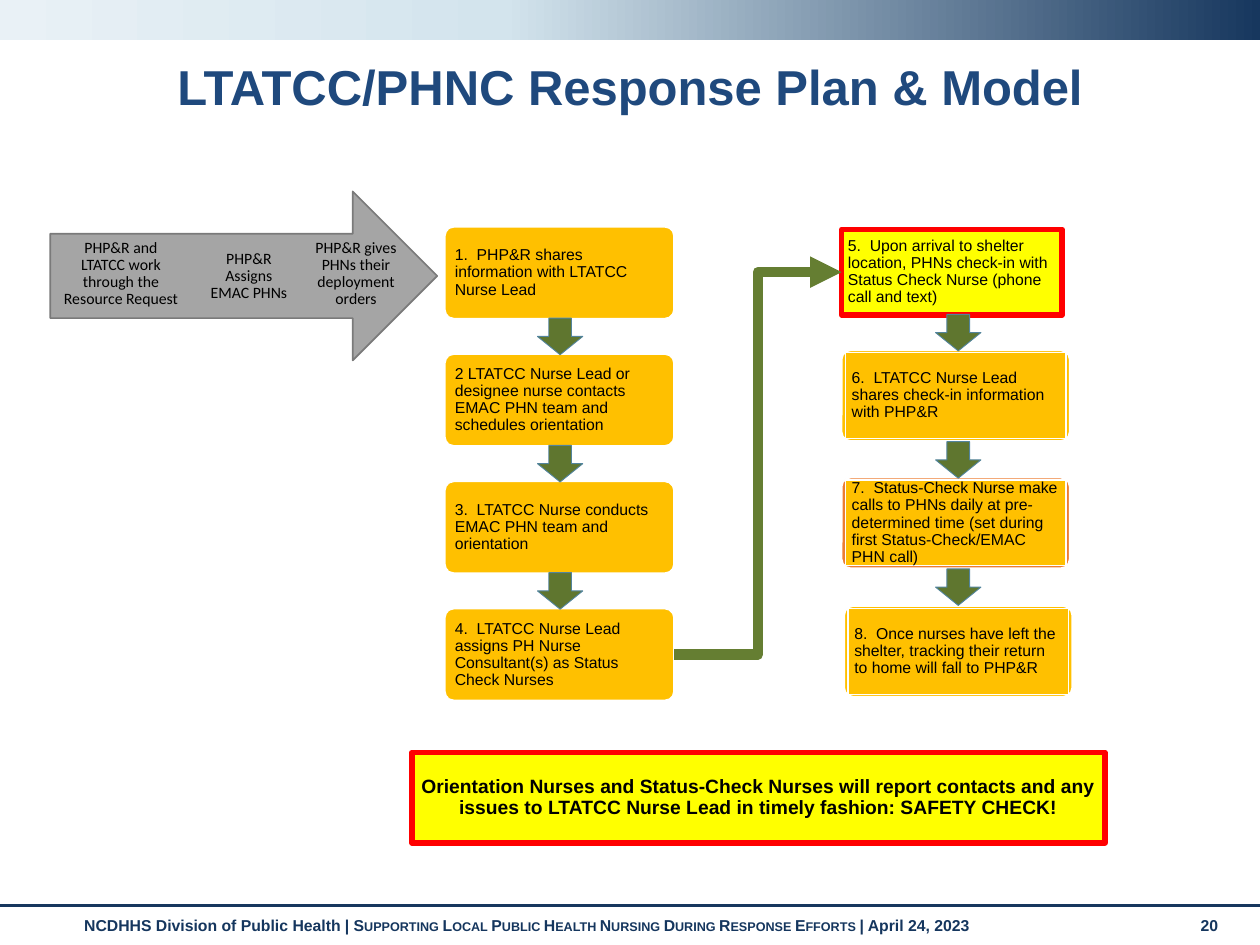
from copy import deepcopy
from dataclasses import dataclass

from lxml.etree import SubElement
from pptx import Presentation
from pptx.dml.color import RGBColor
from pptx.enum.shapes import MSO_CONNECTOR as Link, MSO_SHAPE as Kind
from pptx.enum.text import MSO_ANCHOR as Anchor, MSO_AUTO_SIZE as Fit, PP_ALIGN as Align
from pptx.oxml.ns import qn
from pptx.util import Inches, Pt


@dataclass(frozen=True)
class Theme:
    navy: str = "15365E"
    rule: str = "17375E"
    title: str = "1F497D"
    black: str = "000000"
    white: str = "FFFFFF"
    gold: str = "FFC000"
    orange: str = "ED7D31"
    yellow: str = "FFFF00"
    red: str = "FF0000"
    gray: str = "A5A5A5"
    edge: str = "7A7A7A"
    green: str = "5F762F"
    teal: str = "52849C"
    path_green: str = "657E32"
    bar: tuple = ((0, "17375E"), (0.6, "D3E4ED"), (1, "E9F1F6"))
    font: str = "Arial"
    alt_font: str = "Calibri"
    head: int = 28
    note: int = 11
    small: int = 9


@dataclass(frozen=True)
class Step:
    left: float
    top: float
    text: str
    size: tuple = (1.82, 0.73)
    back: str = Theme.gold
    edge: float = 1
    fill: str = Theme.gold
    line: str | None = None
    width: float = 0.75


T = Theme()
PITCH = 1.01
WIDE = (1.81, 0.72)

LEFT = [Step(3.53, 1.8 + PITCH * i, text) for i, text in enumerate((
    "1.  PHP&R shares information with LTATCC Nurse Lead",
    "2 LTATCC Nurse Lead or designee nurse contacts EMAC PHN team and schedules orientation",
    "3.  LTATCC Nurse conducts EMAC PHN team and orientation",
    "4.  LTATCC Nurse Lead assigns PH Nurse Consultant(s) as Status Check Nurses",
))]
RIGHT = [
    Step(6.65, 1.8, "5.  Upon arrival to shelter location, PHNs check-in with "
         "Status Check Nurse (phone call and text)",
         WIDE, T.gray, 1.5, T.yellow, T.red, 3),
    Step(6.68, 2.78, "6.  LTATCC Nurse Lead shares check-in information with PHP&R",
         WIDE, line=T.white),
    Step(6.68, 3.79, "7.  Status-Check Nurse make calls to PHNs daily at "
         "pre-determined time (set during first Status-Check/EMAC PHN call)",
         WIDE, T.orange, line=T.white),
    Step(6.7, 4.81, "8.  Once nurses have left the shelter, tracking their return "
         "to home will fall to PHP&R", WIDE, line=T.white),
]
INTAKE = (
    ((0.49, 1.84, 0.94, 0.67), "PHP&R and LTATCC work through the Resource Request"),
    ((1.65, 1.86, 0.65, 0.67), "PHP&R Assigns EMAC PHNs"),
    ((2.5, 1.84, 0.65, 0.67), "PHP&R gives PHNs their deployment orders"),
)


def rgb(code: str) -> RGBColor:
    return RGBColor.from_string(code)


def style(para, size: float, color: str, bold=False, font=T.font) -> None:
    para.font.name, para.font.size = font, Pt(size)
    para.font.bold, para.font.color.rgb = bold, rgb(color)


def block(shapes, kind, box: tuple, fill: str | None, line: str | None = None,
          width: float = 1):
    shape = shapes.add_shape(kind, *map(Inches, box))
    shape.shadow.inherit = False
    if fill:
        shape.fill.solid()
        shape.fill.fore_color.rgb = rgb(fill)
    if line:
        shape.line.color.rgb = rgb(line)
        shape.line.width = Pt(width)
    else:
        shape.line.fill.background()
    return shape


def write(shape, text: str, pads: tuple, size: float = T.small,
          align=Align.LEFT, bold=False, font=T.font) -> None:
    frame = shape.text_frame
    frame.word_wrap = True
    frame.vertical_anchor = Anchor.MIDDLE
    frame.margin_left = frame.margin_right = Inches(pads[0])
    frame.margin_top = frame.margin_bottom = Inches(pads[1])
    para = frame.paragraphs[0]
    para.text, para.alignment, para.line_spacing = text, align, 0.9
    style(para, size, T.black, bold, font)


def card(shapes, step: Step) -> tuple:
    wide, high = step.size
    base = block(shapes, Kind.ROUNDED_RECTANGLE, (step.left, step.top, wide, high),
                 step.back, T.white, step.edge)
    base.adjustments[0] = 0.1
    face = block(shapes, Kind.RECTANGLE,
                 (step.left + 0.03, step.top + 0.02, 1.75, high - 0.04),
                 step.fill, step.line, step.width)
    write(face, step.text, (0.05, 0.05))
    return base, face


def arrows(shapes, left: float, top: float) -> None:
    for i in range(3):
        arrow = block(shapes, Kind.RIGHT_ARROW, (left, top + PITCH * i, 0.29, 0.36),
                      T.green, T.teal, 0.5)
        arrow.rotation = 90


def link(shapes, kind, ends: tuple, color: str, width: float):
    wire = shapes.add_connector(kind, *map(Inches, ends))
    wire.line.color.rgb = rgb(color)
    wire.line.width = Pt(width)
    SubElement(wire._element.spPr, qn("a:effectLst"))
    return wire


def footer(shapes, box: tuple, parts: list) -> None:
    frame = shapes.add_textbox(*map(Inches, box)).text_frame
    frame.word_wrap = True
    para = frame.paragraphs[0]
    style(para, T.small, T.navy, True)
    for text, caps in parts:
        run = para.add_run()
        run.text = text
        if caps:
            run.font._element.set("cap", "small")


def frame_page(slide) -> None:
    shapes = slide.shapes
    # Footer
    footer(shapes, (0.57, 7.22, 8.74, 0.3), [
        ("NCDHHS Division of Public Health | ", False),
        ("Supporting Local Public Health Nursing During Response Efforts ", True),
        ("| April 24, 2023", False)])
    footer(shapes, (9.43, 7.22, 0.44, 0.3), [("20", False)])
    link(shapes, Link.STRAIGHT, (0, 7.19, 10, 7.19), T.rule, 1.75)
    # Top bar
    bar = block(shapes, Kind.RECTANGLE, (0, 0, 10, 0.32), None)
    bar.fill.gradient()
    bar.fill.gradient_angle = 180
    stops = bar._element.spPr.find(qn("a:gradFill")).find(qn("a:gsLst"))
    stops.append(deepcopy(stops[-1]))
    for stop, (place, color) in zip(bar.fill.gradient_stops, T.bar):
        stop.position, stop.color.rgb = place, rgb(color)
    # Title
    title = shapes.title
    title.left, title.top, title.width, title.height = map(Inches, (0.71, 0.41, 8.58, 0.6))
    frame = title.text_frame
    frame.text, frame.auto_size = "LTATCC/PHNC Response Plan & Model", Fit.NONE
    frame.vertical_anchor = Anchor.MIDDLE
    para = frame.paragraphs[0]
    para.alignment, para.line_spacing = Align.CENTER, 0.9
    style(para, T.head, T.title, True)


def main() -> None:
    deck = Presentation()
    deck.slide_width, deck.slide_height = Inches(10), Inches(7.5)
    slide = deck.slides.add_slide(deck.slide_layouts[5])
    shapes = slide.shapes
    frame_page(slide)

    # Intake arrow
    block(shapes, Kind.RIGHT_ARROW, (0.4, 1.52, 3.07, 1.34), T.gray, T.edge)
    for box, text in INTAKE:
        write(shapes.add_textbox(*map(Inches, box)), text, (0, 0.1),
              align=Align.CENTER, font=T.alt_font)

    # Steps and the arrows between them
    left = [card(shapes, step) for step in LEFT]
    right = [card(shapes, step) for step in RIGHT]
    arrows(shapes, 4.3, 2.49)
    arrows(shapes, 7.46, 2.46)

    # Step 4 to step 5
    wire = link(shapes, Link.ELBOW, (5.35, 5.19, 6.68, 2.16), T.path_green, 6)
    wire.begin_connect(left[-1][0], 3)
    wire.end_connect(right[0][1], 1)
    SubElement(wire.line._get_or_add_ln(), qn("a:tailEnd"), type="triangle")

    # Safety note
    note = block(shapes, Kind.RECTANGLE, (3.27, 5.97, 5.5, 0.72), T.yellow, T.red, 3)
    write(note, "Orientation Nurses and Status-Check Nurses will report contacts and any "
          "issues to LTATCC Nurse Lead in timely fashion: SAFETY CHECK!",
          (0.05, 0.05), T.note, Align.CENTER, True)

    deck.save("out.pptx")


if __name__ == "__main__":
    main()
